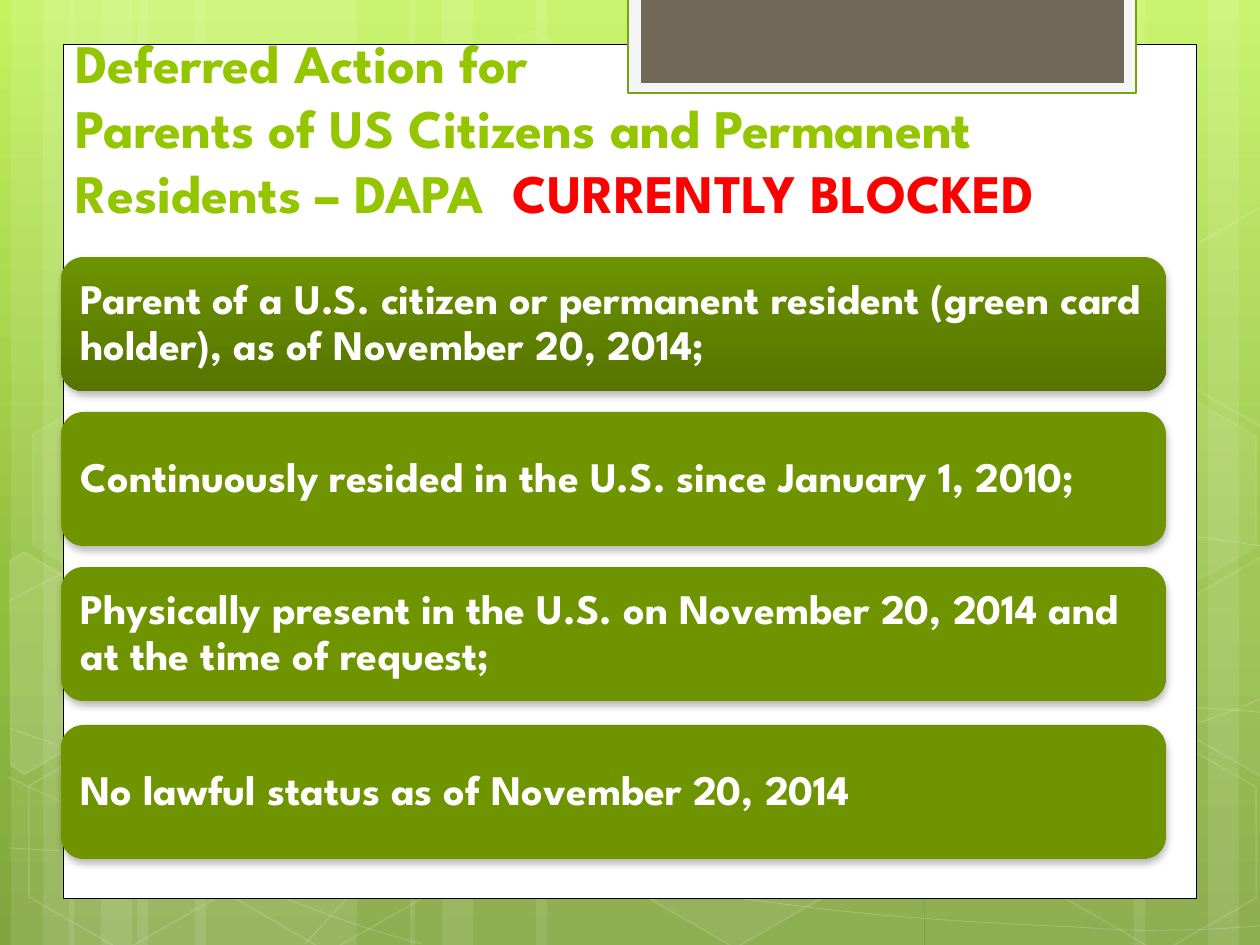
import copy
import dataclasses
import math

import pptx
import pptx.dml.color
import pptx.enum.shapes
import pptx.enum.text
import pptx.oxml
import pptx.oxml.ns
import pptx.util

EMU_PER_PX = 914400 / 126
SHAPES = pptx.enum.shapes.MSO_SHAPE
ANCHORS = pptx.enum.text.MSO_ANCHOR
qn = pptx.oxml.ns.qn
NAMESPACE = pptx.oxml.ns.nsdecls("a")


@dataclasses.dataclass(frozen=True)
class Theme:
    """Colours, font and type sizes of the slide."""
    font: str = "League Spartan"
    title_size: int = 31
    card_size: int = 24
    white: str = "FFFFFF"
    black: str = "000000"
    title: str = "94C600"
    alert: str = "FF0000"
    card: str = "6F9400"
    tab: str = "F5F5F5"
    tab_line: str = "74A510"
    tab_core: str = "71685A"
    background: tuple = ((0, "C3F35F"), (0.62, "93BF3F"), (1, "81A53E"))
    first_card: tuple = ((0, "6D9200"), (1, "577400"))


THEME = Theme()

CARDS = (
    (257, "Parent of a U.S. citizen or permanent resident (green card holder), as of November 20, 2014;"),
    (412, "Continuously resided in the U.S. since January 1, 2010;"),
    (567, "Physically present in the U.S. on November 20, 2014 and at the time of request;"),
    (725, "No lawful status as of November 20, 2014"),
)
STRIPE_TRIOS = ((11, 220, 1), (69, 220, 1), (1271, 220, -1), (410, 388, 1))
HEXAGONS = (
    (421, 45, 4, 8), (626, 742, 6, 12), (14, 745, 0, 12), (18, 393, 7, 8),
    (219, 746, 0, 12), (949, 571, 10, 12), (1051, 747, 0, 12), (1051, 396, 7, 8),
)
LEFT_WEDGE = ((10, 561), (24, 552), (121, 609), (120, 718), (25, 774), (11, 765))
RIGHT_WEDGE = ((1167, 611), (1263, 556), (1271, 562), (1271, 772), (1263, 777), (1167, 722))
CURVES = (
    ((9, 848), (77, 852), (145, 856), (239, 854), (334, 853), (451, 851), (577, 838),
     (703, 825), (882, 802), (998, 777), (1113, 753), (1231, 716), (1269, 694)),
    ((9, 601), (45, 581), (82, 562), (152, 543), (232, 522), (326, 496), (437, 488),
     (549, 479), (685, 478), (824, 488), (963, 498), (1193, 537), (1269, 547)),
    ((8, 777), (160, 847), (311, 916), (422, 944)),
    ((9, 728), (48, 742), (88, 756), (161, 776), (234, 795), (344, 827), (450, 848),
     (554, 869), (687, 892), (791, 905), (896, 919), (1008, 924), (1075, 927),
     (1142, 932), (1158, 930), (1191, 930), (1223, 929), (1246, 927), (1269, 925)),
    ((305, 944), (328, 919), (350, 893), (381, 871), (411, 847), (454, 823), (489, 805),
     (524, 788), (546, 780), (591, 767), (638, 755), (722, 737), (766, 728),
     (811, 719), (818, 719), (857, 717), (896, 713), (958, 709), (1000, 708),
     (1045, 707), (1116, 708), (1116, 708), (1144, 708), (1172, 708), (1201, 708),
     (1223, 709), (1245, 711), (1256, 712), (1268, 713), (1264, 712), (1268, 713)),
)


def px(value):
    """Turn pixels into EMU."""
    return pptx.util.Emu(round(value * EMU_PER_PX))


def rgb(value):
    """Turn a hex string into a colour."""
    return pptx.dml.color.RGBColor.from_string(value)


def set_opacity(element, percent):
    """Give the first colour inside an element an opacity."""
    if percent < 100:
        color = element.find(".//" + qn("a:srgbClr"))
        color.append(pptx.oxml.parse_xml(f'<a:alpha {NAMESPACE} val="{percent * 1000}"/>'))


def paint(shape, fill=None, opacity=100, line=None, width=1, line_opacity=100):
    """Set fill, line and opacities, and drop the shadow."""
    shape.shadow.inherit = False
    properties = shape.element.spPr
    if fill and opacity:
        shape.fill.solid()
        shape.fill.fore_color.rgb = rgb(fill)
        set_opacity(properties.find(qn("a:solidFill")), opacity)
    else:
        shape.fill.background()
    if line:
        shape.line.color.rgb = rgb(line)
        shape.line.width = pptx.util.Pt(width)
        set_opacity(properties.find(qn("a:ln")), line_opacity)
    else:
        shape.line.fill.background()


def paint_gradient(fill, element, stops):
    """Fill from top to bottom through the given stops."""
    fill.gradient()
    fill.gradient_angle = 270
    stop_list = element.find(".//" + qn("a:gsLst"))
    while len(stop_list) < len(stops):
        stop_list.append(copy.deepcopy(stop_list[0]))
    for stop, (position, color) in zip(fill.gradient_stops, stops):
        stop.position = position
        stop.color.rgb = rgb(color)


def add_box(slide, kind, box, **style):
    """Add a painted preset shape."""
    shape = slide.shapes.add_shape(kind, *map(px, box))
    paint(shape, **style)
    return shape


def add_outline(slide, points, close, **style):
    """Add a painted freeform through the points."""
    start, *rest = [(px(x), px(y)) for x, y in points]
    builder = slide.shapes.build_freeform(*start)
    builder.add_line_segments(rest, close=close)
    shape = builder.convert_to_shape()
    paint(shape, **style)
    return shape


def add_curve(slide, points):
    """Add a faint chain of cubic curves."""
    shape = add_outline(slide, points, False, line=THEME.white, width=0.5, line_opacity=20)
    outline = shape.element.find(".//" + qn("a:path"))
    segments = outline.findall(qn("a:lnTo"))
    for index in range(0, len(segments), 3):
        curve = pptx.oxml.parse_xml(f"<a:cubicBezTo {NAMESPACE}/>")
        for segment in segments[index:index + 3]:
            curve.append(segment[0])
            outline.remove(segment)
        outline.append(curve)


def add_stripes(slide, edge, wide, direction):
    """Add three full-height stripes running inwards from an edge."""
    for offset, width in ((126, wide), (0, 63), (32, 105)):
        near = edge + direction * offset
        left = min(near, near + direction * width)
        add_box(slide, SHAPES.RECTANGLE, (left, 0, width, 945), fill=THEME.white, opacity=10)


def add_hexagon(slide, left, top, opacity, line_opacity):
    """Add a faint tilted hexagon."""
    shape = add_box(slide, SHAPES.HEXAGON, (left, top, 220, 192), fill=THEME.white,
                    opacity=opacity, line=THEME.white, line_opacity=line_opacity)
    shape.adjustments[0] = 0.29
    shape.rotation = 30


def add_wedge(slide, points, center, opacity):
    """Add a tilted hexagon cut off by the slide edge."""
    cosine, sine = math.cos(math.radians(30)), math.sin(math.radians(30))
    offsets = [(x - center[0], y - center[1]) for x, y in points]
    level = [(center[0] + x * cosine + y * sine, center[1] - x * sine + y * cosine)
             for x, y in offsets]
    shape = add_outline(slide, level, True, fill=THEME.white, opacity=opacity,
                        line=THEME.white, line_opacity=12)
    shape.rotation = 30


def format_run(run, size, color):
    """Apply the bold slide font to a run."""
    run.font.name = THEME.font
    run.font.size = pptx.util.Pt(size)
    run.font.bold = True
    run.font.color.rgb = rgb(color)


def add_title(slide):
    """Add the two-colour title."""
    text_frame = slide.shapes.add_textbox(*map(px, (63, 42, 1071, 189))).text_frame
    text_frame.word_wrap = True
    text_frame.vertical_anchor = ANCHORS.BOTTOM
    text_frame.text = ("Deferred Action for \vParents of US Citizens and Permanent "
                       "Residents – DAPA  ")
    paragraph = text_frame.paragraphs[0]
    for run in paragraph.runs:
        format_run(run, THEME.title_size, THEME.title)
    alert = paragraph.add_run()
    alert.text = "CURRENTLY BLOCKED"
    format_run(alert, THEME.title_size, THEME.alert)


def add_card(slide, top, text):
    """Add a rounded card with a soft shadow and return it."""
    shape = add_box(slide, SHAPES.ROUNDED_RECTANGLE, (61, top, 1105, 134), fill=THEME.card)
    shape.element.spPr.find(qn("a:effectLst")).append(pptx.oxml.parse_xml(
        f'<a:outerShdw {NAMESPACE} blurRad="50800" dist="25400" dir="5400000" rotWithShape="0">'
        f'<a:srgbClr val="{THEME.black}"><a:alpha val="28000"/></a:srgbClr></a:outerShdw>'))
    text_frame = shape.text_frame
    text_frame.word_wrap = True
    text_frame.vertical_anchor = ANCHORS.MIDDLE
    text_frame.margin_left = text_frame.margin_right = px(13)
    text_frame.text = text
    paragraph = text_frame.paragraphs[0]
    paragraph.alignment = pptx.enum.text.PP_ALIGN.LEFT
    paragraph.line_spacing = 0.9
    format_run(paragraph.runs[0], THEME.card_size, THEME.white)
    return shape


def add_backdrop(slide):
    """Add the gradient, stripes, curves and hexagons."""
    paint_gradient(slide.background.fill, slide.element, THEME.background)
    for trio in STRIPE_TRIOS:
        add_stripes(slide, *trio)
    for curve in CURVES:
        add_curve(slide, curve)
    for hexagon in HEXAGONS:
        add_hexagon(slide, *hexagon)
    add_wedge(slide, LEFT_WEDGE, (45, 675), 10)
    for rise, opacity in ((0, 4), (350, 0)):
        points = [(x, y - rise) for x, y in RIGHT_WEDGE]
        add_wedge(slide, points, (1241, 655 - rise), opacity)


def main():
    """Build and save the slide."""
    presentation = pptx.Presentation()
    presentation.slide_width, presentation.slide_height = px(1260), px(945)
    slide = presentation.slides.add_slide(presentation.slide_layouts[6])
    add_backdrop(slide)
    add_box(slide, SHAPES.RECTANGLE, (63, 45, 1134, 854),
            fill=THEME.white, line=THEME.black, width=0.5)
    add_box(slide, SHAPES.RECTANGLE, (628, -3, 508, 96),
            fill=THEME.tab, line=THEME.tab_line, width=1.25)
    add_box(slide, SHAPES.RECTANGLE, (641, -3, 483, 86), fill=THEME.tab_core)
    add_title(slide)
    cards = [add_card(slide, *card) for card in CARDS]
    paint_gradient(cards[0].fill, cards[0].element, THEME.first_card)
    presentation.save("out.pptx")


if __name__ == "__main__":
    main()
